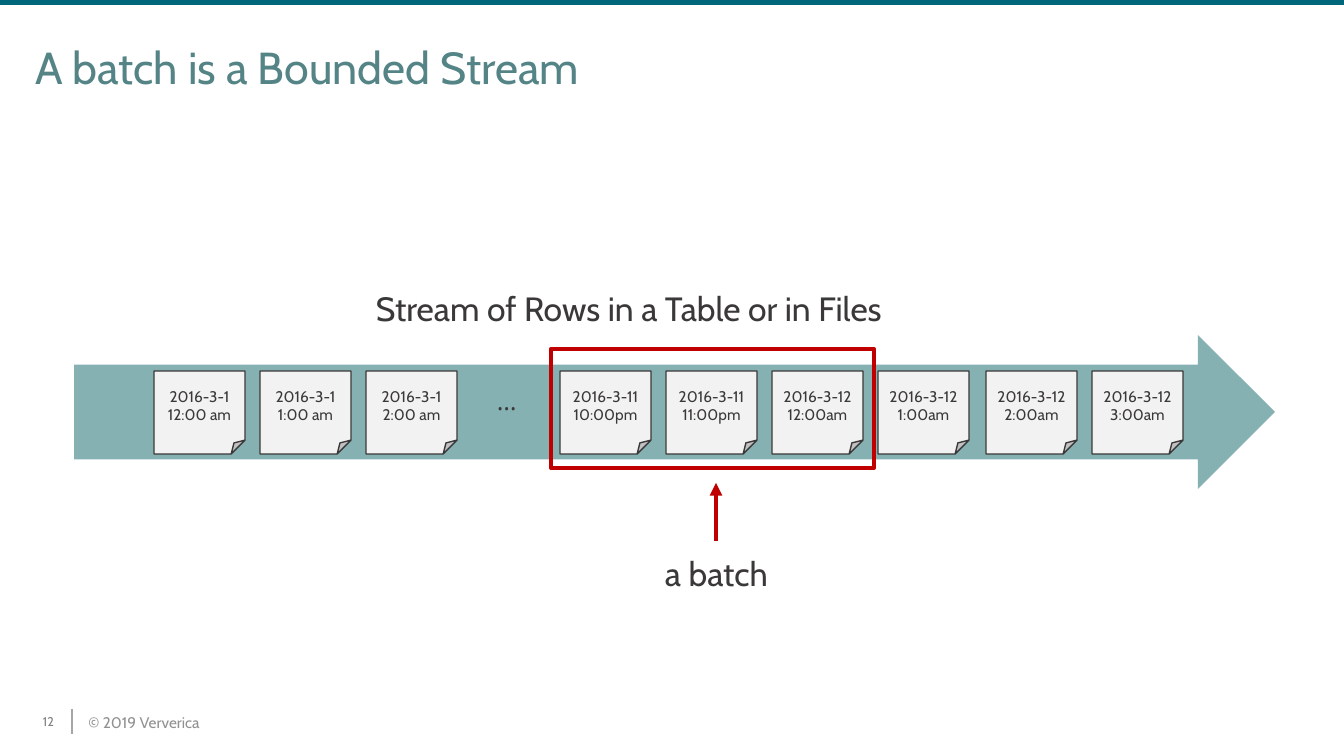
"""Build the slide that shows a batch as a bounded part of a stream."""
from lxml import etree
from pptx import Presentation, util as u
from pptx.dml.color import RGBColor
from pptx.enum import shapes, text
from pptx.oxml.ns import qn

PX = 914400 / 100.8
DARK, RED = "3A3838", "C00000"
LEFT, CENTER = text.PP_ALIGN.LEFT, text.PP_ALIGN.CENTER
TOP, MIDDLE = text.MSO_ANCHOR.TOP, text.MSO_ANCHOR.MIDDLE


def px(*lengths):
    return [u.Emu(round(length * PX)) for length in lengths]


def write(shape, words, size, color=DARK, font="Cabin", align=LEFT, anchor=TOP, inset=(0, 0), wrap=False):
    frame = shape.text_frame
    side, edge = px(*inset)
    settings = {
        "margin_left": side, "margin_right": side, "margin_top": edge, "margin_bottom": edge,
        "vertical_anchor": anchor, "word_wrap": wrap, "auto_size": text.MSO_AUTO_SIZE.NONE,
    }
    for name, value in settings.items():
        setattr(frame, name, value)
    paragraph = frame.paragraphs[0]
    paragraph.text = words
    paragraph.alignment = align
    for name, value in {"name": font, "size": u.Pt(size)}.items():
        setattr(paragraph.font, name, value)
    paragraph.font.color.rgb = RGBColor.from_string(color)


presentation = Presentation()
presentation.slide_width, presentation.slide_height = px(1344, 756)
slide = presentation.slides.add_slide(presentation.slide_layouts[5])

title = slide.shapes.title
title.left, title.top, title.width, title.height = px(35, 40, 1272, 54)
write(title, "A batch is a Bounded Stream", 32, "548486", wrap=True)

cards = []
for start, times in [
    (154, ["2016-3-1\n12:00 am", "2016-3-1\n1:00 am", "2016-3-1\n2:00 am"]),
    (560, ["2016-3-11\n10:00pm", "2016-3-11\n11:00pm", "2016-3-12\n12:00am", "2016-3-12\n1:00am"]),
    (986, ["2016-3-12\n2:00am", "2016-3-12\n3:00am"]),
]:
    cards += [(start + 106 * index, time) for index, time in enumerate(times)]

kinds = shapes.MSO_SHAPE
outlines = [
    (kinds.RECTANGLE, (0, 0, 1344, 5), "006679", None, 0, None),
    (kinds.RIGHT_ARROW, (74, 335, 1201, 154), "85B1B3", None, 0, None),
    *[(kinds.FOLDED_CORNER, (left, 371, 91, 83), "F2F2F2", DARK, 1, time) for left, time in cards],
    (kinds.RECTANGLE, (551, 349, 323, 119), None, RED, 3, None),
]
for kind, box, fill, line, width, words in outlines:
    shape = slide.shapes.add_shape(kind, *px(*box))
    shape.shadow.inherit = False
    if fill:
        shape.fill.solid()
        shape.fill.fore_color.rgb = RGBColor.from_string(fill)
    else:
        shape.fill.background()
    if line:
        shape.line.color.rgb = RGBColor.from_string(line)
        shape.line.width = u.Pt(width)
    else:
        shape.line.fill.background()
    if kind == kinds.RIGHT_ARROW:
        shape.adjustments[0] = 0.615
    if words:
        write(shape, words, 11, align=CENTER, anchor=MIDDLE)

labels = [
    ((368, 284, 539, 48), "Stream of Rows in a Table or in Files", 24, {"inset": (8, 4)}),
    ((657, 549, 121, 48), "a batch", 24, {"inset": (8, 4)}),
    ((487, 380, 50, 54), "…", 18, {"font": "Open Sans", "inset": (10, 5)}),
    ((87, 713, 114, 19), "© 2019 Ververica", 11, {"color": "919191", "align": CENTER, "anchor": MIDDLE}),
    ((37, 714, 23, 15), "12", 9, {"color": "808080", "align": CENTER, "anchor": MIDDLE, "wrap": True}),
]
for box, words, size, style in labels:
    write(slide.shapes.add_textbox(*px(*box)), words, size, **style)

for ends, color, width, head in [
    ((72, 709, 72, 734), "A6A6A6", 1.5, False),
    ((716, 541, 716, 483), RED, 3, True),
]:
    connector = slide.shapes.add_connector(shapes.MSO_CONNECTOR.STRAIGHT, *px(*ends))
    connector.line.color.rgb = RGBColor.from_string(color)
    connector.line.width = u.Pt(width)
    properties = connector._element.spPr
    etree.SubElement(properties, qn("a:effectLst"))
    if head:
        etree.SubElement(properties.find(qn("a:ln")), qn("a:tailEnd"), type="triangle")

presentation.save("out.pptx")
